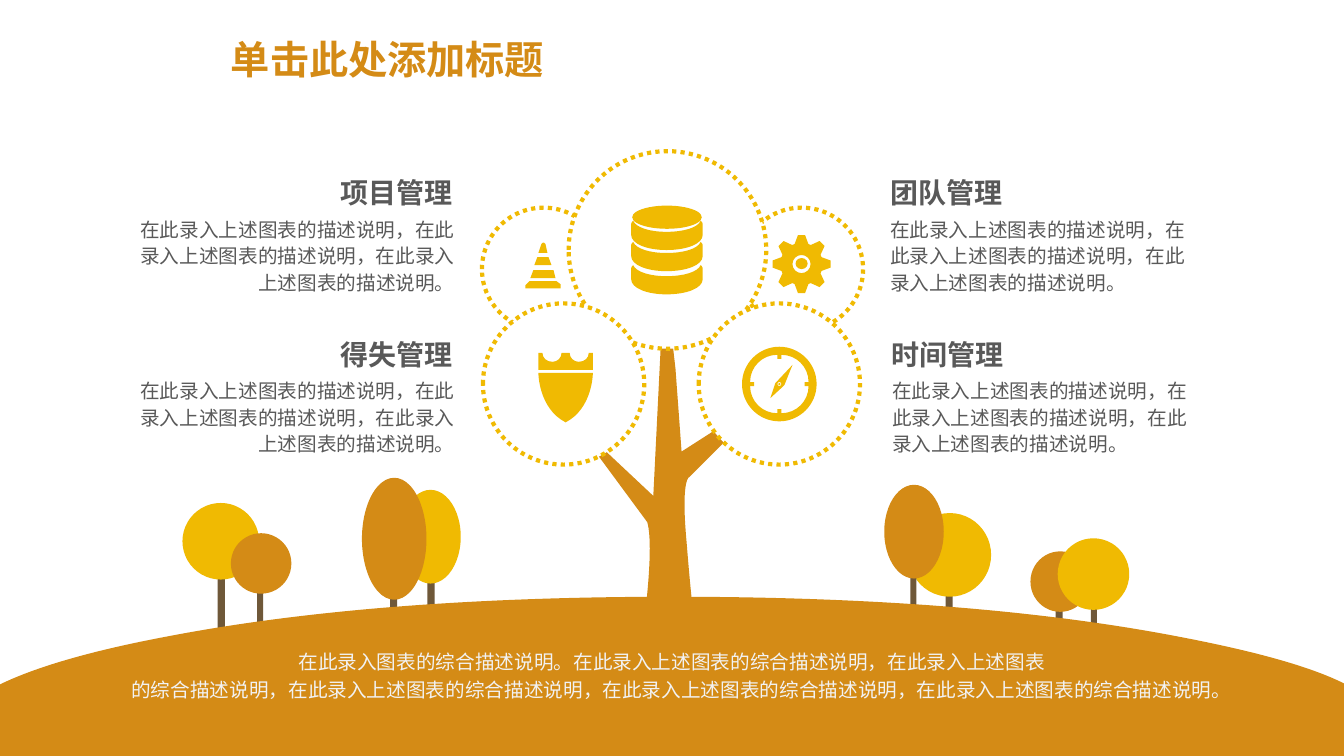
"""Build a tree diagram slide with five icon bubbles and four captions."""
from math import cos, radians, sin

from lxml import etree
from pptx import Presentation
from pptx.dml.color import RGBColor
from pptx.enum.dml import MSO_LINE
from pptx.enum.shapes import MSO_SHAPE as Shape
from pptx.enum.text import MSO_ANCHOR as Anchor, PP_ALIGN as Align
from pptx.oxml.ns import qn
from pptx.util import Inches, Pt

YELLOW = RGBColor(0xF0, 0xBA, 0x02)
ORANGE = RGBColor(0xD4, 0x8B, 0x16)
BROWN = RGBColor(0x6F, 0x58, 0x39)
GREY = RGBColor(0x59, 0x59, 0x59)
PALE = RGBColor(0xF2, 0xF2, 0xF2)
WHITE = RGBColor(0xFF, 0xFF, 0xFF)
CJK = "Noto Sans CJK SC"

TITLE = "单击此处添加标题"
DETAIL = "在此录入上述图表的描述说明，在此录入上述图表的描述说明，在此录入上述图表的描述说明。"
SUMMARY = [
    "在此录入图表的综合描述说明。在此录入上述图表的综合描述说明，在此录入上述图表",
    "的综合描述说明，在此录入上述图表的综合描述说明，在此录入上述图表的综合描述说明，"
    "在此录入上述图表的综合描述说明。",
]
CAPTIONS = [
    ("团队管理", 8.73, 1.69, 8.73, 2.08, 3.3, 1.1, Align.LEFT),
    ("时间管理", 8.74, 3.3, 8.75, 3.68, 3.3, 0.77, Align.LEFT),
    ("得失管理", 3.28, 3.3, 1.11, 3.68, 3.5, 0.77, Align.RIGHT),
    ("项目管理", 3.28, 1.69, 1.11, 2.08, 3.5, 1.27, Align.RIGHT),
]
TREES = [
    [(BROWN, 9.38, 5.3, 0.07, 0.75), (YELLOW, 9.01, 5.09, 0.82, 0.83),
     (BROWN, 9.03, 5.3, 0.06, 0.75), (ORANGE, 8.77, 4.81, 0.59, 0.93)],
    [(BROWN, 3.87, 5.91, 0.07, 0.22), (BROWN, 4.24, 5.3, 0.07, 0.75),
     (YELLOW, 3.97, 4.86, 0.6, 0.93), (ORANGE, 3.59, 4.74, 0.64, 1.21)],
    [(BROWN, 2.16, 5.55, 0.07, 0.75), (BROWN, 2.55, 5.74, 0.06, 0.5),
     (YELLOW, 1.81, 4.99, 0.76, 0.76), (ORANGE, 2.29, 5.29, 0.6, 0.6)],
    [(BROWN, 10.47, 5.58, 0.07, 0.64), (ORANGE, 10.22, 5.47, 0.59, 0.6),
     (BROWN, 10.82, 5.79, 0.06, 0.5), (YELLOW, 10.49, 5.34, 0.71, 0.71)],
]
MAIN_TREE = [
    (6.36, 6.38), (6.36, 6.38, 6.5, 5.46, 6.42, 5.18), (5.66, 4.15),
    (6.48, 4.92), (6.59, 2.7), (6.7, 3.66), (6.76, 4.48), (7.68, 3.89),
    (6.84, 4.73), (6.84, 4.73, 6.75, 4.73, 6.81, 5.38),
    (6.86, 6.02, 6.91, 6.37, 6.91, 6.37),
]
HILL = [
    (6.67, 5.92), (8.64, 5.92, 10.32, 6.05, 11.71, 6.32),
    (12.44, 6.46, 12.99, 6.61, 13.33, 6.78), (13.33, 7.5), (0, 7.5),
    (0, 6.79), (0.35, 6.62, 0.89, 6.46, 1.63, 6.32),
    (3.02, 6.05, 4.7, 5.92, 6.67, 5.92),
]
CONE = [
    [(5.56, 2.86), (5.21, 2.86), (5.21, 2.83), (5.25, 2.79), (5.52, 2.79), (5.56, 2.82)],
    [(5.26, 2.76), (5.29, 2.68), (5.49, 2.68), (5.51, 2.76)],
    [(5.3, 2.63), (5.33, 2.55), (5.44, 2.55), (5.47, 2.63)],
    [(5.37, 2.42), (5.37, 2.42, 5.39, 2.39, 5.41, 2.42), (5.43, 2.51), (5.34, 2.51)],
]
SHIELD = [(5.61, 4.19), (5.88, 4.05, 5.88, 3.7, 5.88, 3.7), (5.34, 3.7),
          (5.34, 3.7, 5.34, 4.05, 5.61, 4.19)]
CROWN = [
    (5.84, 3.5), (5.84, 3.55, 5.8, 3.59, 5.74, 3.59),
    (5.69, 3.59, 5.65, 3.55, 5.65, 3.5), (5.57, 3.5),
    (5.57, 3.55, 5.53, 3.59, 5.48, 3.59), (5.42, 3.59, 5.38, 3.55, 5.38, 3.5),
    (5.34, 3.5), (5.34, 3.67), (5.88, 3.67), (5.88, 3.5),
]
NEEDLE = [(7.69, 3.8), (7.64, 3.95), (7.76, 3.84), (7.78, 3.82), (7.86, 3.62), (7.71, 3.78)]
DISK_TOPS = [2.4, 2.63, 2.19]
DIAL_QUARTER = [(0.29, -0.02), (0.25, -0.02), (0.25, 0.02), (0.29, 0.02),
                (0.29, 0.17, 0.17, 0.29, 0.02, 0.29)]


def quarters(cx, cy, pattern):
    contour = []
    for ux, uy in [(1, 0), (0, 1), (-1, 0), (0, -1)]:
        for seg in pattern:
            pairs = zip(seg[::2], seg[1::2])
            contour.append(tuple(v for x, y in pairs
                                 for v in (cx + x * ux - y * uy, cy + x * uy + y * ux)))
    return contour


def ring(cx, cy, r):
    k = 0.55 * r
    return [(cx + r, cy)] + quarters(cx, cy, [(r, k, k, r, 0, r)])


def gear(cx, cy):
    profile = [(0.21, -19), (0.29, -7), (0.29, 7), (0.21, 19)]
    return [(cx + r * cos(radians(45 * tooth + a)), cy + r * sin(radians(45 * tooth + a)))
            for tooth in range(8) for r, a in profile]


def disk(y):
    return [(6.61, y + 0.11), (6.45, y + 0.11, 6.31, y + 0.07, 6.28, y),
            (6.27, y + 0.01, 6.26, y + 0.02, 6.26, y + 0.03), (6.26, y + 0.14),
            (6.26, y + 0.23, 6.42, y + 0.29, 6.61, y + 0.29),
            (6.81, y + 0.29, 6.97, y + 0.23, 6.97, y + 0.14), (6.97, y + 0.03),
            (6.97, y + 0.02, 6.96, y + 0.01, 6.95, y),
            (6.92, y + 0.07, 6.78, y + 0.11, 6.61, y + 0.11)]


def paint(sp, color):
    sp.shadow.inherit = False
    sp.fill.solid()
    sp.fill.fore_color.rgb = color
    sp.line.fill.background()
    return sp


def bend(sp, segments):
    lines = list(sp._element.iter(qn("a:lnTo")))
    for line, seg in zip(lines, segments):
        if len(seg) == 6:
            line.tag_curve = etree.Element(qn("a:cubicBezTo"))
            for x, y in zip(seg[::2], seg[1::2]):
                etree.SubElement(line.tag_curve, qn("a:pt"),
                                 x=str(Inches(x) - sp.left), y=str(Inches(y) - sp.top))
            line.getparent().replace(line, line.tag_curve)


def outline(shapes, color, *contours):
    ends = [[tuple(map(Inches, seg[-2:])) for seg in c] for c in contours]
    builder = shapes.build_freeform(*ends[0][0], scale=1.0)
    for i, points in enumerate(ends):
        if i:
            builder.move_to(*points[0])
        builder.add_line_segments(points[1:], close=False)
        builder.add_line_segments([], close=True)
    sp = paint(builder.convert_to_shape(), color)
    for node in list(sp._element.iter(qn("a:lnTo"))):
        node.set("w", "0")
        del node.attrib["w"]
    bend(sp, [seg for c in contours for seg in c[1:]])
    return sp


def preset(shapes, kind, color, *box):
    return paint(shapes.add_shape(kind, *map(Inches, box)), color)


def bubble(x, y, size):
    shapes = s.shapes.add_group_shape().shapes
    sp = preset(shapes, Shape.OVAL, WHITE, x, y, size, size)
    sp.line.color.rgb = YELLOW
    sp.line.width = Pt(3)
    sp.line.dash_style = MSO_LINE.ROUND_DOT
    return shapes


def style(p, size, color, bold=False, name=CJK, spacing=1.0, align=Align.LEFT):
    p.alignment, p.line_spacing = align, spacing
    p.font.size, p.font.bold, p.font.name = Pt(size), bold, name
    p.font.color.rgb = color
    etree.SubElement(p._p.pPr.find(qn("a:defRPr")), qn("a:ea"), typeface=CJK)


def text(lines, box, size, color, wrap=True, **look):
    tf = s.shapes.add_textbox(*map(Inches, box)).text_frame
    tf.word_wrap = wrap
    tf.text = "\n".join(lines)
    for p in tf.paragraphs:
        style(p, size, color, **look)
    return tf


prs = Presentation()
prs.slide_width, prs.slide_height = Inches(13.33), Inches(7.5)
s = prs.slides.add_slide(prs.slide_layouts[5])

title = s.shapes.title
title.left, title.top, title.width, title.height = map(Inches, (2.19, 0.34, 11.5, 0.54))
title.text_frame.text = TITLE
title.text_frame.vertical_anchor = Anchor.MIDDLE
style(title.text_frame.paragraphs[0], 28, ORANGE, True, "Montserrat", 0.9)

for tree in TREES:
    group = s.shapes.add_group_shape().shapes
    for color, *box in tree:
        preset(group, Shape.RECTANGLE if color == BROWN else Shape.OVAL, color, *box)
outline(s.shapes, ORANGE, MAIN_TREE)
outline(s.shapes, ORANGE, HILL)

tf = text(SUMMARY, (1.13, 6.36, 11.07, 0.64), 14, PALE, spacing=1.2, align=Align.CENTER)
tf.margin_left = tf.margin_right = Inches(0.14)
tf.margin_top = tf.margin_bottom = Inches(0.04)
for heading, x, y, *detail_box, align in CAPTIONS:
    text([DETAIL], detail_box, 14, GREY, spacing=1.13, align=align)
    text([heading], (x, y, 1.32, 0.44), 20, GREY, wrap=False, bold=True)

group = bubble(7.34, 2.06, 1.22)
outline(group, YELLOW, gear(7.95, 2.62), ring(7.95, 2.62, 0.09))
preset(group, Shape.OVAL, YELLOW, 7.89, 2.56, 0.12, 0.11)

outline(bubble(4.78, 2.06, 1.22), YELLOW, *CONE)

group = bubble(5.64, 1.5, 1.96)
for top in DISK_TOPS:
    outline(group, YELLOW, disk(top))
preset(group, Shape.OVAL, YELLOW, 6.27, 2.04, 0.69, 0.23)

group = bubble(6.93, 3.01, 1.6)
outline(group, YELLOW, ring(7.73, 3.81, 0.37), quarters(7.73, 3.81, DIAL_QUARTER))
outline(group, YELLOW, NEEDLE, ring(7.73, 3.81, 0.02))
preset(group, Shape.OVAL, YELLOW, 7.72, 3.8, 0.02, 0.02)

group = bubble(4.79, 3.01, 1.6)
outline(group, YELLOW, SHIELD)
outline(group, YELLOW, CROWN)

prs.save("out.pptx")
